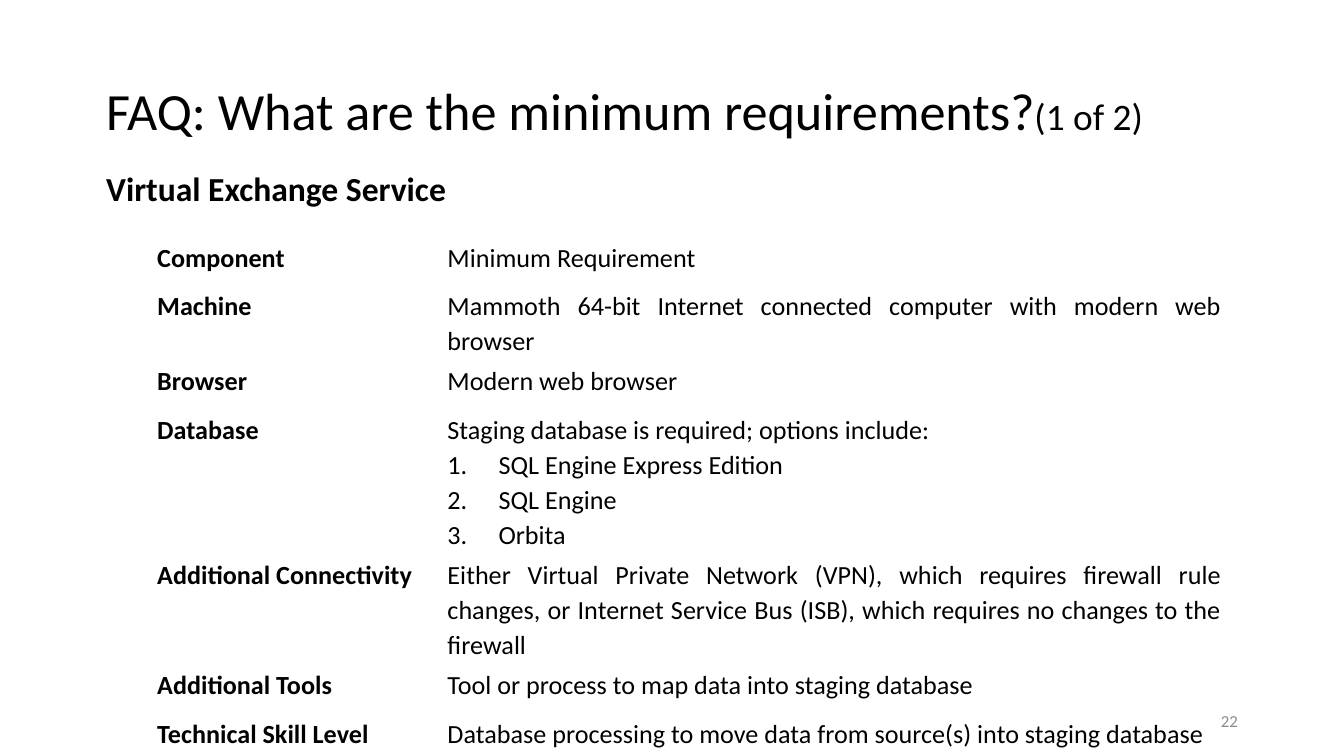
from lxml import etree
from pptx import Presentation
from pptx.dml.color import RGBColor
from pptx.enum import text
from pptx.oxml import ns
from pptx.util import Inches, Pt

BLACK = RGBColor(0x00, 0x00, 0x00)
GRAY = RGBColor(0x8C, 0x8C, 0x8C)

NO_STYLE_NO_GRID = "{2D5ABB26-0587-4C30-8999-92F81FD0307C}"
COLUMN_WIDTHS = [2.16, 5.84]
ROW_HEIGHTS = [0.36, 0.36, 0.36, 1.05, 0.54, 0.36, 0.36]

# Each component has one lead text, optionally followed by numbered options
REQUIREMENTS = [
    ("Component", ["Minimum Requirement"]),
    ("Machine", ["Mammoth 64-bit Internet connected computer with modern web browser"]),
    ("Browser", ["Modern web browser"]),
    ("Database", ["Staging database is required; options include:",
                  "SQL Engine Express Edition", "SQL Engine", "Orbita"]),
    ("Additional Connectivity",
     ["Either Virtual Private Network (VPN), which requires firewall rule changes, "
      "or Internet Service Bus (ISB), which requires no changes to the firewall"]),
    ("Additional Tools", ["Tool or process to map data into staging database"]),
    ("Technical Skill Level",
     ["Database processing to move data from source(s) into staging database"]),
]


class SlideBuilder:
    """Holds the style and the current slide."""

    font_name = "Calibri"

    def __init__(self, slide):
        self.slide = slide

    def place(self, shape, left, top, width, height):
        shape.left, shape.top = Inches(left), Inches(top)
        shape.width, shape.height = Inches(width), Inches(height)
        shape.text_frame.word_wrap = True
        shape.text_frame.auto_size = text.MSO_AUTO_SIZE.NONE

    def style(self, paragraph, size, bold=False, color=BLACK,
              align=text.PP_ALIGN.LEFT, spacing=None):
        paragraph.alignment = align
        paragraph.line_spacing = spacing
        font = paragraph.font
        font.name, font.size, font.bold = self.font_name, Pt(size), bold
        font.color.rgb = color

    def bullet(self, paragraph, tag, indent=0, **attributes):
        properties = paragraph._p.get_or_add_pPr()
        properties.set("marL", str(Inches(indent)))
        properties.set("indent", str(-Inches(indent)))
        mark = etree.Element(ns.qn(tag), **attributes)
        properties.insert_element_before(mark, "a:tabLst", "a:defRPr", "a:extLst")

    def title(self, main, suffix):
        shape = self.slide.shapes.title
        self.place(shape, 0.69, 0.3, 8.62, 1.09)
        shape.text_frame.vertical_anchor = text.MSO_ANCHOR.MIDDLE
        paragraph = shape.text_frame.paragraphs[0]
        self.style(paragraph, 28, spacing=0.9)
        paragraph.add_run().text = main
        run = paragraph.add_run()
        run.text = suffix
        run.font.size = Pt(20)

    def body(self, heading):
        shape = self.slide.placeholders[1]
        self.place(shape, 0.69, 1.23, 8.81, 3.66)
        paragraph = shape.text_frame.paragraphs[0]
        paragraph.text = heading
        self.style(paragraph, 18, bold=True, spacing=0.9)
        paragraph.space_before = Pt(3.8)
        self.bullet(paragraph, "a:buNone")

    def page_number(self, number):
        shape = self.slide.shapes.add_textbox(0, 0, 0, 0)
        self.place(shape, 7.06, 5.21, 2.25, 0.3)
        shape.text_frame.vertical_anchor = text.MSO_ANCHOR.MIDDLE
        paragraph = shape.text_frame.paragraphs[0]
        paragraph.text = number
        self.style(paragraph, 9, color=GRAY, align=text.PP_ALIGN.RIGHT)

    def cell(self, cell, lines, bold=False):
        cell.fill.background()
        cell.margin_left = cell.margin_right = Inches(0.04)
        cell.margin_top = cell.margin_bottom = Inches(0.02)
        cell.text = "\n".join(lines)
        for index, paragraph in enumerate(cell.text_frame.paragraphs):
            self.style(paragraph, 14, bold, align=text.PP_ALIGN.JUSTIFY, spacing=1.1)
            if index:
                self.bullet(paragraph, "a:buAutoNum", 0.38, type="arabicPeriod")

    def table(self, rows):
        table = self.slide.shapes.add_table(
            len(rows), len(COLUMN_WIDTHS), Inches(1.13), Inches(1.76),
            Inches(sum(COLUMN_WIDTHS)), Inches(sum(ROW_HEIGHTS))).table
        table.first_row = table.horz_banding = False
        table._tbl.tblPr.find(ns.qn("a:tableStyleId")).text = NO_STYLE_NO_GRID
        for column, width in zip(table.columns, COLUMN_WIDTHS):
            column.width = Inches(width)
        for index, (component, requirement) in enumerate(rows):
            table.rows[index].height = Inches(ROW_HEIGHTS[index])
            self.cell(table.cell(index, 0), [component], bold=True)
            self.cell(table.cell(index, 1), requirement)


def main():
    # Widescreen, 16:9
    presentation = Presentation()
    presentation.slide_width = Inches(10)
    presentation.slide_height = Inches(10 * 9 / 16)
    slide = presentation.slides.add_slide(presentation.slide_layouts[1])
    builder = SlideBuilder(slide)

    # Heading
    builder.title("FAQ: What are the minimum requirements?", "(1 of 2)")
    builder.body("Virtual Exchange Service")

    # Page number and requirements table
    builder.page_number("22")
    builder.table(REQUIREMENTS)

    presentation.save("out.pptx")


if __name__ == "__main__":
    main()
